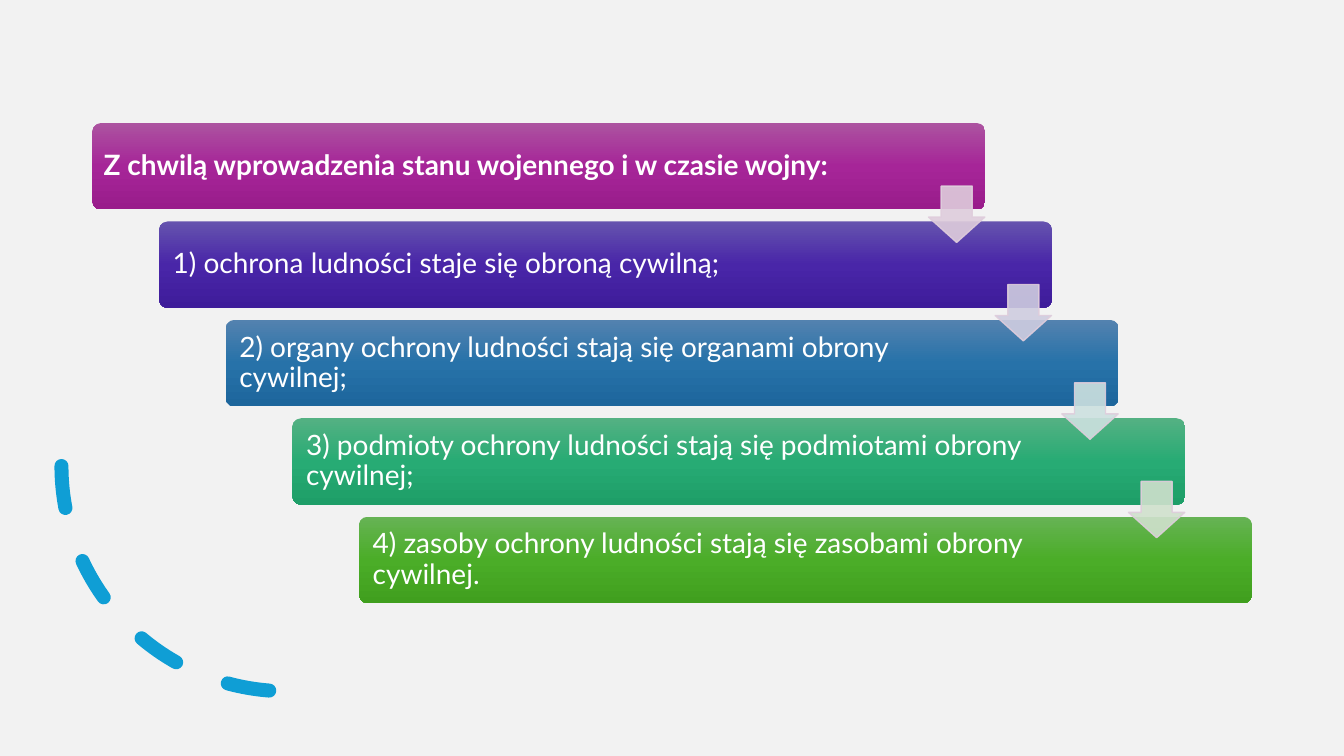
from copy import deepcopy
from dataclasses import dataclass

from pptx import Presentation
from pptx.dml.color import RGBColor
from pptx.enum import dml, shapes, text
from pptx.oxml import ns
from pptx.oxml.xmlchemy import OxmlElement
from pptx.util import Cm, Pt


@dataclass(frozen=True)
class Theme:
    font: str = "Lato"
    text_size: int = 20
    text: str = "FFFFFF"
    background: str = "F2F2F2"
    arc: str = "0F9ED5"
    arrow_line: str = "DFCDDC"
    arrow_fills: tuple = ("DFCDDC", "CFCDE0", "CDE1E0", "D0E1CD")
    card_gradients: tuple = (
        ("AC53A0", "A62598", "991C8B"),
        ("6553AE", "4926A8", "3E1C9A"),
        ("5382AF", "2772A9", "1D669C"),
        ("54B183", "27AB74", "1E9E68"),
        ("66B354", "4BAD28", "409F1E"),
    )


THEME = Theme()
HEADING = "Z chwilą wprowadzenia stanu wojennego i w czasie wojny:"
STEPS = (
    "1) ochrona ludności staje się obroną cywilną;",
    "2) organy ochrony ludności stają się organami obrony cywilnej;",
    "3) podmioty ochrony ludności stają się podmiotami obrony cywilnej;",
    "4) zasoby ochrony ludności stają się zasobami obrony cywilnej.",
)
CARD_LEFT, CARD_TOP = Cm(2.33), Cm(3.1)
CARD_WIDTH, CARD_HEIGHT = Cm(22.5), Cm(2.18)
STEP_X, STEP_Y = Cm(1.68), Cm(2.48)
ARROW_LEFT, ARROW_TOP, ARROW_SIZE = Cm(23.4), Cm(4.69), Cm(1.42)


def write_text(shape, content, *, bold=False):
    frame = shape.text_frame
    frame.word_wrap = True
    frame.auto_size = text.MSO_AUTO_SIZE.NONE
    frame.vertical_anchor = text.MSO_ANCHOR.MIDDLE
    frame.margin_left, frame.margin_right = Cm(0.28), Cm(3.38)
    frame.margin_top = frame.margin_bottom = Cm(0.25)
    frame.text = content
    paragraph = frame.paragraphs[0]
    paragraph.alignment = text.PP_ALIGN.LEFT
    paragraph.line_spacing = 0.9
    paragraph.space_before = Pt(0)
    font = paragraph.runs[0].font
    font.name, font.size, font.bold = THEME.font, Pt(THEME.text_size), bold
    font.color.rgb = RGBColor.from_string(THEME.text)


def fill_gradient(shape, colors):
    """Fill from top to bottom with three evenly spaced colours."""
    fill = shape.fill
    fill.gradient()
    fill.gradient_angle = 270
    first_stop = shape._element.spPr.find(".//" + ns.qn("a:gs"))
    first_stop.addnext(deepcopy(first_stop))
    for index, (stop, color) in enumerate(zip(fill.gradient_stops, colors)):
        stop.position = index / 2
        stop.color.rgb = RGBColor.from_string(color)


def set_opacity(color_format_parent, percent):
    for color in color_format_parent.iter(ns.qn("a:srgbClr")):
        alpha = OxmlElement("a:alpha")
        alpha.set("val", str(percent * 1000))
        color.append(alpha)


def add_card(slide, index, colors):
    card = slide.shapes.add_shape(
        shapes.MSO_SHAPE.ROUNDED_RECTANGLE,
        CARD_LEFT + index * STEP_X, CARD_TOP + index * STEP_Y,
        CARD_WIDTH, CARD_HEIGHT)
    card.adjustments[0] = 0.1
    card.shadow.inherit = False
    card.line.fill.background()
    fill_gradient(card, colors)
    return card


def add_arrow(slide, index, color):
    arrow = slide.shapes.add_shape(
        shapes.MSO_SHAPE.DOWN_ARROW,
        ARROW_LEFT + index * STEP_X, ARROW_TOP + index * STEP_Y,
        ARROW_SIZE, ARROW_SIZE)
    arrow.adjustments[0], arrow.adjustments[1] = 0.55, 0.45
    arrow.shadow.inherit = False
    arrow.fill.solid()
    arrow.fill.fore_color.rgb = RGBColor.from_string(color)
    arrow.line.color.rgb = RGBColor.from_string(THEME.arrow_line)
    arrow.line.width = Pt(1)
    set_opacity(arrow._element.spPr, 90)


def add_dashed_arc(slide):
    arc = slide.shapes.add_shape(
        shapes.MSO_SHAPE.ARC, Cm(1.55), Cm(6.07), Cm(11.35), Cm(11.35))
    arc.rotation = 90
    arc._element.spPr.xfrm.set("flipV", "1")
    arc.shadow.inherit = False
    arc.fill.background()
    arc.line.color.rgb = RGBColor.from_string(THEME.arc)
    arc.line.width = Pt(10)
    arc.line.dash_style = dml.MSO_LINE.DASH
    arc._element.spPr.find(ns.qn("a:ln")).set("cap", "rnd")


def place_title_on(slide, card):
    title = slide.shapes.title
    title.left, title.top = card.left, card.top
    title.width, title.height = card.width, card.height
    card._element.addnext(title._element)
    write_text(title, HEADING, bold=True)


def main():
    presentation = Presentation()
    presentation.slide_width, presentation.slide_height = Cm(33.87), Cm(19.05)
    slide = presentation.slides.add_slide(presentation.slide_layouts[5])
    background = slide.background.fill
    background.solid()
    background.fore_color.rgb = RGBColor.from_string(THEME.background)

    add_dashed_arc(slide)
    cards = [add_card(slide, index, colors)
             for index, colors in enumerate(THEME.card_gradients)]
    place_title_on(slide, cards[0])
    for card, step in zip(cards[1:], STEPS):
        write_text(card, step)
    for index, color in enumerate(THEME.arrow_fills):
        add_arrow(slide, index, color)

    presentation.save("out.pptx")


if __name__ == "__main__":
    main()
